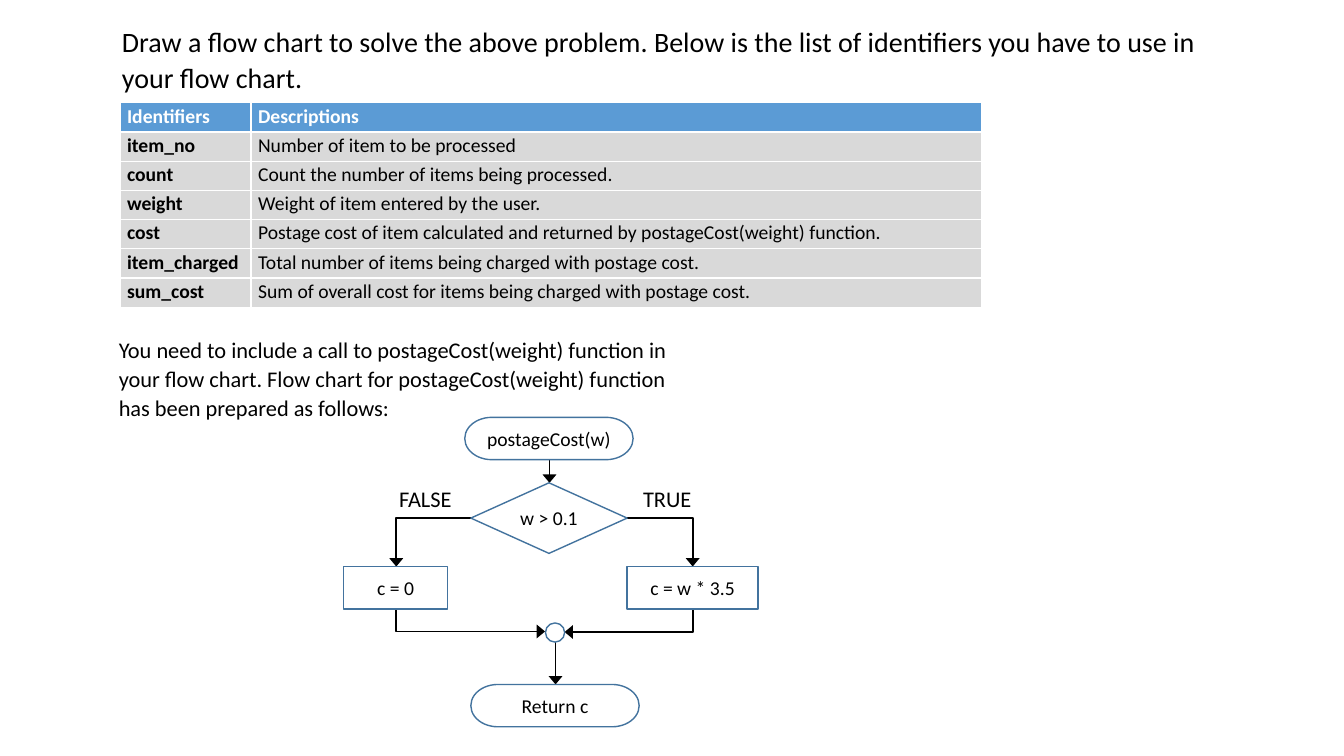
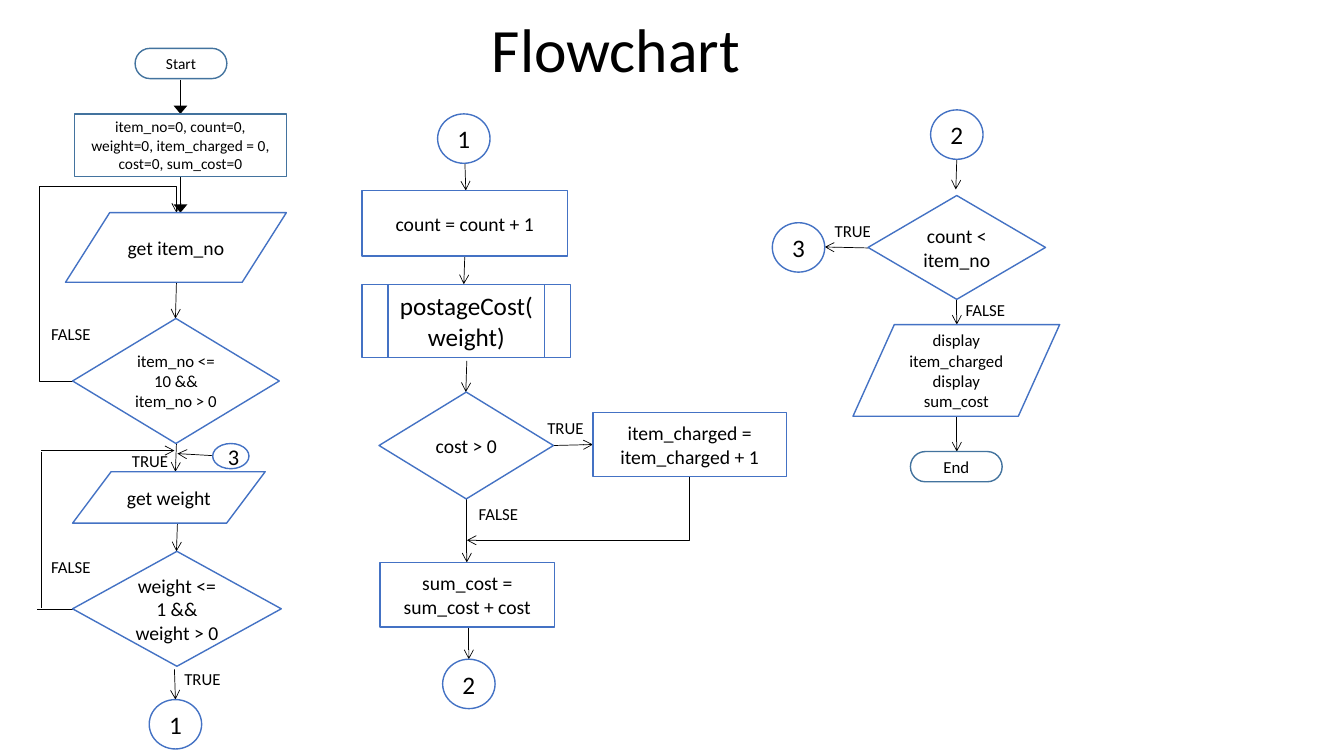
from lxml import etree
from pptx import Presentation
from pptx.dml.color import RGBColor
from pptx.enum.shapes import MSO_CONNECTOR, MSO_SHAPE
from pptx.enum.text import MSO_ANCHOR, MSO_AUTO_SIZE, PP_ALIGN
from pptx.oxml.ns import qn
from pptx.util import Inches, Pt

FONT = "Calibri"
COLORS = {
    "text": "000000",
    "white": "FFFFFF",
    "header": "5B9BD5",
    "row": "D9D9D9",
    "steel": "43739E",
    "blue": "4472C4",
}
RGB = {name: RGBColor.from_string(value) for name, value in COLORS.items()}

TERMINATOR = MSO_SHAPE.FLOWCHART_TERMINATOR
PROCESS = MSO_SHAPE.FLOWCHART_PROCESS
DECISION = MSO_SHAPE.FLOWCHART_DECISION
DATA = MSO_SHAPE.FLOWCHART_DATA
CIRCLE = MSO_SHAPE.FLOWCHART_CONNECTOR
CALL = MSO_SHAPE.FLOWCHART_PREDEFINED_PROCESS
RECT = MSO_SHAPE.RECTANGLE


def write(tf, text, size, color="text", bold=False, align=None, spacing=None):
    tf.word_wrap = True
    tf.text = text
    for p in tf.paragraphs:
        p.font.name = FONT
        p.font.size = Pt(size)
        p.font.bold = bold
        p.font.color.rgb = RGB[color]
        if align is not None:
            p.alignment = align
        if spacing:
            p.line_spacing = spacing


def connect(s, kind, start, end, width, arrow):
    ends = [Inches(v) for v in (*start, *end)]
    c = s.shapes.add_connector(kind, *ends)
    c.line.color.rgb = RGB["text"]
    c.line.width = Pt(width)
    if arrow:
        tail = etree.SubElement(c.line._get_or_add_ln(), qn("a:tailEnd"), type=arrow)
        if arrow == "triangle":
            tail.set("w", "lg")
    etree.SubElement(c._element.spPr, qn("a:effectLst"))
    return c


prs = Presentation()
prs.slide_width = Inches(13.33)
prs.slide_height = Inches(7.5)

titles = [
    ("Draw a flow chart to solve the above problem. Below is the list of "
     "identifiers you have to use in your flow chart.",
     (1.11, 0.17, 11.15, 0.81), 20, PP_ALIGN.LEFT, 1.07, MSO_ANCHOR.TOP),
    ("Flowchart", (0.36, 0.11, 11.5, 0.83), 44, PP_ALIGN.CENTER, 0.9, MSO_ANCHOR.MIDDLE),
]
slides = []
for text, box, size, align, spacing, anchor in titles:
    s = prs.slides.add_slide(prs.slide_layouts[5])
    sp = s.shapes.title
    sp.left, sp.top, sp.width, sp.height = [Inches(v) for v in box]
    tf = sp.text_frame
    tf.auto_size = MSO_AUTO_SIZE.NONE
    tf.vertical_anchor = anchor
    write(tf, text, size, align=align, spacing=spacing)
    slides.append(s)
problem, solution = slides

identifiers = [
    ("Identifiers", "Descriptions"),
    ("item_no", "Number of item to be processed"),
    ("count", "Count the number of items being processed."),
    ("weight", "Weight of item entered by the user."),
    ("cost", "Postage cost of item calculated and returned by postageCost(weight) function."),
    ("item_charged", "Total number of items being charged with postage cost."),
    ("sum_cost", "Sum of overall cost for items being charged with postage cost."),
]
table = problem.shapes.add_table(
    len(identifiers), 2, Inches(1.19), Inches(1.02), Inches(8.55), Inches(2.03)).table
table.columns[0].width = Inches(1.3)
table.columns[1].width = Inches(7.25)
for i, row in enumerate(identifiers):
    for j, text in enumerate(row):
        cell = table.cell(i, j)
        cell.margin_left = cell.margin_right = Inches(0.07)
        cell.margin_top = cell.margin_bottom = 0
        cell.fill.solid()
        cell.fill.fore_color.rgb = RGB["row" if i else "header"]
        write(cell.text_frame, text, 14, "text" if i else "white",
              bold=i == 0 or j == 0, spacing=1.07)

problem_arrows = [
    [(5.45, 4.56), (5.45, 4.79)],
    [(5.51, 6.37), (5.51, 6.79)],
]
start_arrows = [
    [(1.79, 0.79), (1.79, 1.13)],
    [(1.79, 1.75), (1.79, 2.11)],
]
solution_arrows = [
    [(1.75, 2.8), (1.74, 3.16)],
    [(1.75, 4.4), (1.74, 4.68)],
    [(2.1, 4.52), (1.76, 4.5)],
    [(1.76, 5.19), (1.75, 5.47)],
    [(1.73, 6.64), (1.74, 6.94)],
    [(0.41, 4.47), (1.73, 4.47)],
    [(4.61, 1.58), (4.62, 1.89)],
    [(4.61, 2.54), (4.6, 2.82)],
    [(4.63, 3.58), (4.62, 3.89)],
    [(5.49, 4.42), (5.88, 4.41)],
    [(4.63, 4.95), (4.63, 5.58)],
    [(4.65, 6.23), (4.65, 6.54)],
    [(9.49, 1.57), (9.48, 1.88)],
    [(8.61, 2.46), (8.18, 2.45)],
    [(9.49, 2.97), (9.49, 3.22)],
    [(9.49, 4.13), (9.49, 4.48)],
]
plain_lines = [
    [(0.72, 6.05), (0.37, 6.05)],
    [(0.41, 6.03), (0.41, 4.48)],
]
for s, routes, width, arrow in [
    (problem, problem_arrows, 1.25, "triangle"),
    (solution, start_arrows, 1.25, "triangle"),
    (solution, solution_arrows, 0.5, "arrow"),
    (solution, plain_lines, 0.5, None),
]:
    for start, end in routes:
        connect(s, MSO_CONNECTOR.STRAIGHT, start, end, width, arrow)

elbows = [
    (problem, (6.22, 5.14, 0.65, 0.48), 0, None, "bentConnector2", [], 1.25, "triangle"),
    (problem, (3.93, 5.14, 0.74, 0.48), 180, "flipV", "bentConnector2", [], 1.25, "triangle"),
    (problem, (6.12, 5.52, 0.23, 1.27), 90, None, "bentConnector2", [], 1.25, "triangle"),
    (problem, (4.55, 5.41, 0.23, 1.48), 270, "flipH", "bentConnector2", [], 1.25, "triangle"),
    (solution, (0.72, 2.11, 1.03, 1.67), 180, "flipH", "bentConnector4",
     [-31900, 115600], 0.5, "arrow"),
    (solution, (5.42, 3.94, 0.63, 2.21), 90, None, "bentConnector2", [], 0.5, "arrow"),
]
for s, (x, y, w, h), turn, flip, preset, adjusts, width, arrow in elbows:
    c = connect(s, MSO_CONNECTOR.ELBOW, (x, y), (x + w, y + h), width, arrow)
    xfrm = c._element.spPr.find(qn("a:xfrm"))
    xfrm.set("rot", str(turn * 60000))
    if flip:
        xfrm.set(flip, "1")
    geom = c._element.spPr.find(qn("a:prstGeom"))
    geom.set("prst", preset)
    for i, value in enumerate(adjusts, 1):
        etree.SubElement(geom.find(qn("a:avLst")), qn("a:gd"),
                         name=f"adj{i}", fmla=f"val {value}")

problem_nodes = [
    (TERMINATOR, (4.61, 4.14, 1.67, 0.42), "postageCost(w)", 14),
    (DECISION, (4.67, 4.79, 1.55, 0.7), "w > 0.1", 14),
    (PROCESS, (3.41, 5.62, 1.03, 0.42), "c = 0", 14),
    (PROCESS, (6.22, 5.62, 1.3, 0.42), "c = w * 3.5", 14),
    (CIRCLE, (5.41, 6.18, 0.19, 0.19), "", 14),
    (TERMINATOR, (4.67, 6.79, 1.67, 0.42), "Return c", 14),
]
outline_nodes = [
    (TERMINATOR, (1.34, 0.48, 0.91, 0.3), "Start", 11),
    (PROCESS, (0.74, 1.13, 2.1, 0.62),
     "item_no=0, count=0, weight=0, item_charged = 0, cost=0, sum_cost=0", 11),
    (TERMINATOR, (9.03, 4.48, 0.91, 0.3), "End", 12),
]
solution_nodes = [
    (DATA, (0.65, 2.11, 2.19, 0.69), "get item_no", 14),
    (DECISION, (0.72, 3.16, 2.05, 1.24), "item_no <= 10 && item_no > 0", 12),
    (DATA, (0.72, 4.68, 1.91, 0.51), "get weight", 14),
    (DECISION, (0.72, 5.47, 2.07, 1.14), "weight <= 1 && weight > 0", 14),
    (RECT, (3.59, 1.89, 2.04, 0.65), "count = count + 1", 14),
    (CALL, (3.59, 2.82, 2.07, 0.73), "postageCost(weight)", 18),
    (DECISION, (3.76, 3.89, 1.73, 1.06), "cost > 0", 14),
    (RECT, (5.88, 4.09, 1.92, 0.64), "item_charged = item_charged + 1", 14),
    (RECT, (3.77, 5.58, 1.73, 0.64), "sum_cost = sum_cost + cost", 14),
    (DECISION, (8.61, 1.94, 1.76, 1.03), "count < item_no", 14),
    (DATA, (8.46, 3.22, 2.05, 0.91), "display item_charged\ndisplay sum_cost", 12),
    (CIRCLE, (2.11, 4.4, 0.36, 0.25), "3", 16),
]
for text, x, y in [("1", 1.48, 6.94), ("1", 4.34, 1.13), ("2", 4.39, 6.54),
                   ("2", 9.23, 1.09), ("3", 7.66, 2.21)]:
    solution_nodes.append((CIRCLE, (x, y, 0.52, 0.49), text, 18))

for s, nodes, color, filled in [
    (problem, problem_nodes, "steel", False),
    (solution, outline_nodes, "steel", False),
    (solution, solution_nodes, "blue", True),
]:
    for kind, box, text, size in nodes:
        sp = s.shapes.add_shape(kind, *[Inches(v) for v in box])
        sp.shadow.inherit = False
        if filled:
            sp.fill.solid()
            sp.fill.fore_color.rgb = RGB["white"]
        else:
            sp.fill.background()
        sp.line.color.rgb = RGB[color]
        sp.line.width = Pt(1)
        if text:
            write(sp.text_frame, text, size, align=PP_ALIGN.CENTER)

call_note = ("You need to include a call to postageCost(weight) function in your flow chart. "
             "Flow chart for postageCost(weight) function has been prepared as follows:")
problem_labels = [
    ("FALSE", (3.86, 4.76, 0.81, 0.37)),
    ("TRUE", (6.28, 4.76, 0.81, 0.37)),
]
solution_labels = [
    ("FALSE", (0.41, 3.16, 0.8, 0.3)),
    ("TRUE", (1.21, 4.42, 0.7, 0.3)),
    ("FALSE", (0.41, 5.47, 0.8, 0.3)),
    ("TRUE", (1.73, 6.59, 0.73, 0.3)),
    ("TRUE", (5.33, 4.1, 0.7, 0.3)),
    ("FALSE", (4.65, 4.95, 0.83, 0.3)),
    ("TRUE", (8.18, 2.14, 0.7, 0.3)),
    ("FALSE", (9.48, 2.92, 0.83, 0.3)),
]
for s, labels, size, spacing in [
    (problem, [(call_note, (1.08, 3.27, 5.74, 0.95))], 16, 1.07),
    (problem, problem_labels, 16, None),
    (solution, solution_labels, 12, None),
]:
    for text, box in labels:
        sp = s.shapes.add_textbox(*[Inches(v) for v in box])
        write(sp.text_frame, text, size, spacing=spacing)

prs.save("out.pptx")
